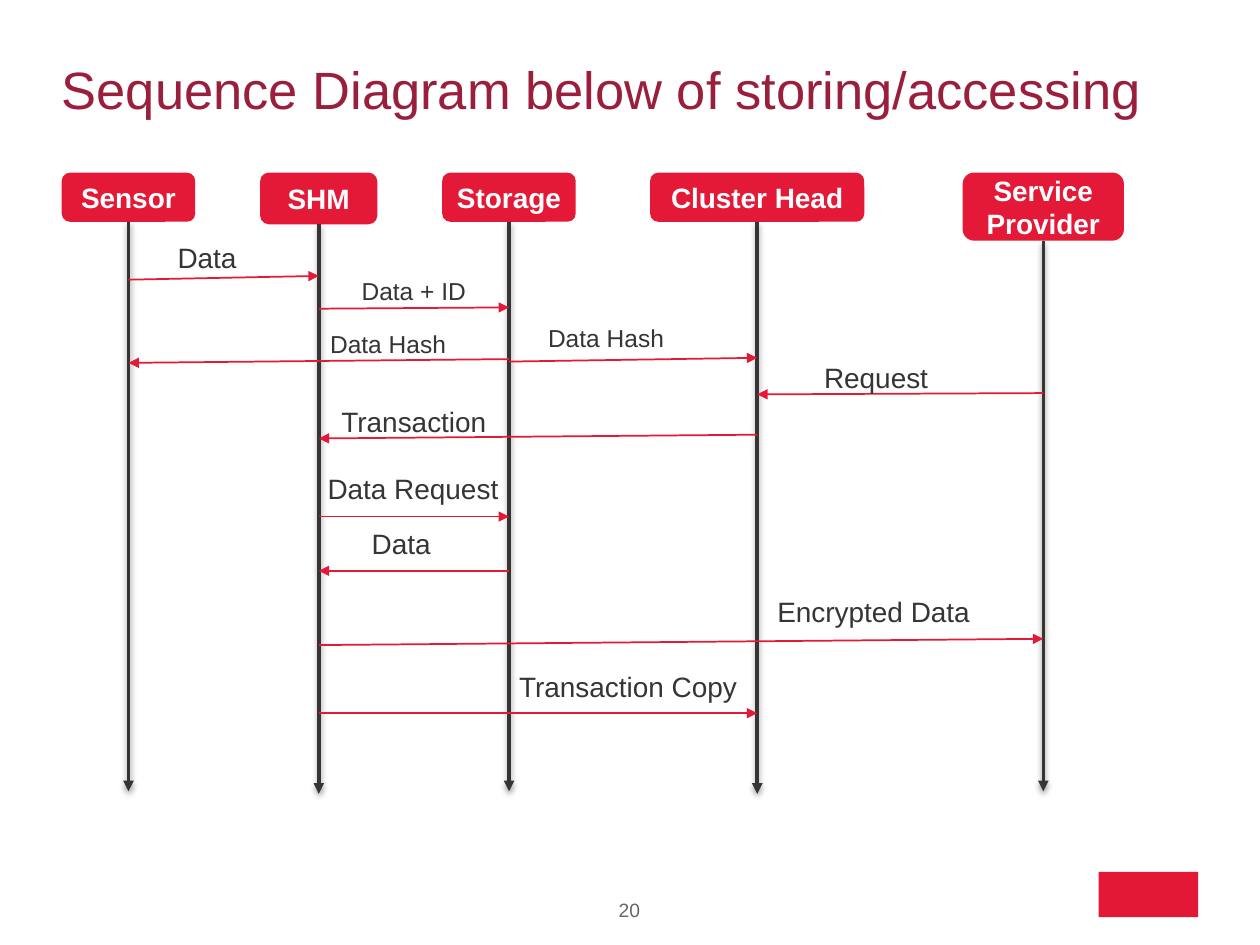
"""Build a sequence diagram of storing and accessing sensor data."""
from lxml.etree import SubElement as Sub
from pptx import Presentation
from pptx.dml.color import RGBColor
from pptx.enum.shapes import MSO_CONNECTOR as Link, MSO_SHAPE as Shape
from pptx.enum.text import MSO_ANCHOR as Anchor, PP_ALIGN as Align
from pptx.oxml.ns import qn
from pptx.util import Inches, Pt

hue = RGBColor.from_string
RED, DARK = "E31937", "363534"

deck = Presentation()
deck.slide_width, deck.slide_height = Inches(10), Inches(7.5)
slide = deck.slides.add_slide(deck.slide_layouts[6])
shapes = slide.shapes


def write(shape, text, size, tone, side=0, bold=False, align=Align.LEFT, anchor=Anchor.TOP, wrap=True):
    frame = shape.text_frame
    frame.word_wrap = wrap
    frame.vertical_anchor = anchor
    frame.margin_left = frame.margin_right = Inches(side)
    frame.margin_top = frame.margin_bottom = 0
    para = frame.paragraphs[0]
    para.alignment = align
    run = para.add_run()
    run.text = text
    run.font.name = "Arial"
    run.font.size = Pt(size)
    run.font.bold = bold
    run.font.color.rgb = hue(tone)


def arrow(x1, y1, x2, y2, tone, width):
    line = shapes.add_connector(Link.STRAIGHT, Inches(x1), Inches(y1), Inches(x2), Inches(y2))
    line.line.color.rgb = hue(tone)
    line.line.width = Pt(width)
    Sub(line.line._get_or_add_ln(), qn("a:tailEnd"), type="triangle")
    return Sub(line._element.spPr, qn("a:effectLst"))


logo = shapes.add_shape(Shape.RECTANGLE, Inches(8.72), Inches(6.92), Inches(0.79), Inches(0.36))
logo.shadow.inherit = False
logo.fill.solid()
logo.fill.fore_color.rgb = hue("E31837")
logo.line.fill.background()

title = shapes.add_textbox(Inches(0.49), Inches(0.2), Inches(9.01), Inches(1.01))
write(title, "Sequence Diagram below of storing/accessing", 30, "991F3D", anchor=Anchor.MIDDLE)
page = shapes.add_textbox(Inches(4.57), Inches(7.13), Inches(0.85), Inches(0.26))
write(page, "20", 11, "666666", align=Align.CENTER, wrap=False)

top = 1.37
actors = [
    ("Sensor", 1.02, 1.06, 0.39, 6.28),
    ("SHM", 2.53, 0.93, 0.41, 6.3),
    ("Storage", 4.04, 1.06, 0.39, 6.28),
    ("Cluster Head", 6.01, 1.7, 0.39, 6.3),
    ("Service Provider", 8.28, 1.28, 0.54, 6.28),
]
mid = {}
for name, x, wide, high, end in actors:
    mid[name] = x
    box = shapes.add_shape(Shape.ROUNDED_RECTANGLE, Inches(x - wide / 2), Inches(top), Inches(wide), Inches(high))
    box.shadow.inherit = False
    box.fill.solid()
    box.fill.fore_color.rgb = hue(RED)
    box.line.fill.background()
    write(box, name, 16, "FFFFFF", 0.07, True, Align.CENTER, Anchor.MIDDLE)
    glow = arrow(x, top + high, x, end, DARK, 2)
    shade = Sub(glow, qn("a:outerShdw"), blurRad=str(Pt(3.1)), dist=str(Pt(1.6)), dir="5400000", rotWithShape="0")
    tint = Sub(shade, qn("a:srgbClr"), val="000000")
    Sub(tint, qn("a:alpha"), val="38000")

calls = [
    ("Sensor", 2.22, "SHM", 2.19, "Data", 1.41, 1.91, 0.57, 16),
    ("SHM", 2.45, "Storage", 2.44, "Data + ID", 2.87, 2.19, 0.83, 14),
    ("Storage", 2.85, "Sensor", 2.88, "Data Hash", 2.62, 2.61, 1.36, 14),
    ("Storage", 2.87, "Cluster Head", 2.84, "Data Hash", 4.35, 2.56, 1.36, 14),
    ("Service Provider", 3.12, "Cluster Head", 3.13, "Request", 6.54, 2.86, 1.22, 16),
    ("Cluster Head", 3.45, "SHM", 3.48, "Transaction", 2.71, 3.21, 1.35, 16),
    ("SHM", 4.1, "Storage", 4.1, "Data Request", 2.6, 3.74, 1.38, 16),
    ("Storage", 4.53, "SHM", 4.53, "Data", 2.95, 4.18, 0.57, 16),
    ("SHM", 5.12, "Service Provider", 5.07, "Encrypted Data", 6.17, 4.72, 1.93, 16),
    ("SHM", 5.66, "Cluster Head", 5.66, "Transaction Copy", 4.12, 5.31, 1.88, 16),
]
for start, y1, stop, y2, text, x, y, wide, size in calls:
    arrow(mid[start], y1, mid[stop], y2, RED, 1)
    label = shapes.add_textbox(Inches(x), Inches(y), Inches(wide), Inches(size / 60))
    write(label, text, size, DARK, wrap=text != "Data + ID")

deck.save("out.pptx")
